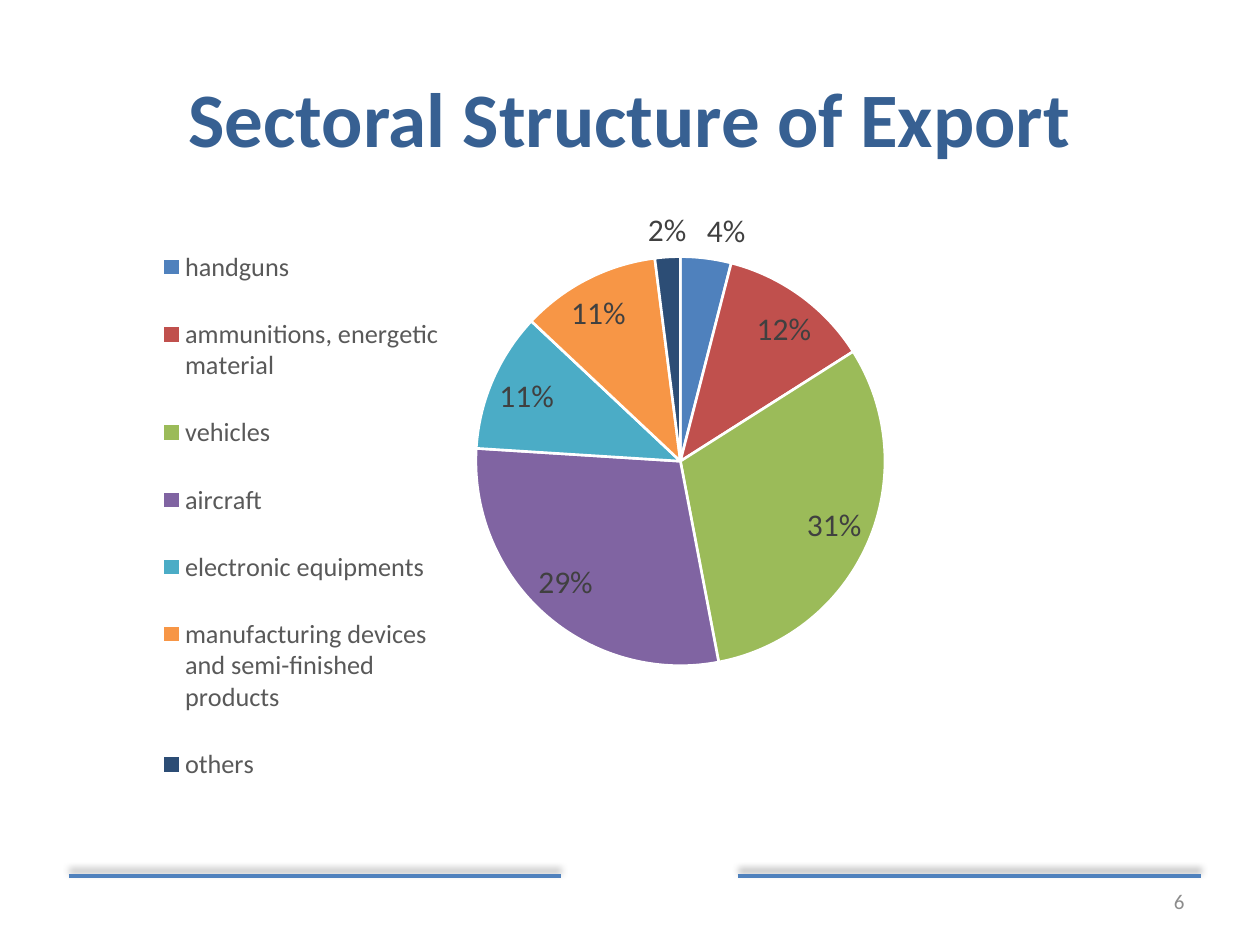
from lxml.etree import SubElement
from pptx import Presentation
from pptx.chart.data import CategoryChartData
from pptx.dml.color import RGBColor
from pptx.enum.chart import XL_CHART_TYPE, XL_LABEL_POSITION, XL_LEGEND_POSITION
from pptx.enum.shapes import MSO_CONNECTOR
from pptx.enum.text import MSO_ANCHOR, PP_ALIGN
from pptx.oxml import parse_xml
from pptx.oxml.ns import nsdecls, qn
from pptx.util import Emu, Pt

PX_PER_INCH = 126
FONT = "Calibri"
WHITE = RGBColor(0xFF, 0xFF, 0xFF)
BLACK = RGBColor(0x00, 0x00, 0x00)
NAVY = RGBColor(0x37, 0x60, 0x92)
BLUE = RGBColor(0x4F, 0x81, 0xBD)
RED = RGBColor(0xC0, 0x50, 0x4D)
GREEN = RGBColor(0x9B, 0xBB, 0x59)
PURPLE = RGBColor(0x80, 0x64, 0xA2)
TEAL = RGBColor(0x4B, 0xAC, 0xC6)
ORANGE = RGBColor(0xF7, 0x96, 0x46)
DARK_BLUE = RGBColor(0x2C, 0x4D, 0x75)
LABEL_GRAY = RGBColor(0x40, 0x40, 0x40)
LEGEND_GRAY = RGBColor(0x59, 0x59, 0x59)
NUMBER_GRAY = RGBColor(0x8C, 0x8C, 0x8C)

SECTORS = [
    ("handguns", 4, BLUE),
    ("ammunitions, energetic material", 12, RED),
    ("vehicles", 31, GREEN),
    ("aircraft", 29, PURPLE),
    ("electronic equipments", 11, TEAL),
    ("manufacturing devices and semi-finished products", 11, ORANGE),
    ("others", 2, DARK_BLUE),
]
PLOT_AREA = {"x": 0.31, "y": 0.13, "w": 0.46, "h": 0.6}
LEGEND_AREA = {"x": 0.02, "y": 0.07, "w": 0.29, "h": 0.88}


def px(length):
    return Emu(round(length * 914400 / PX_PER_INCH))


def set_font(font, color, **values):
    for name, value in {"name": FONT, **values}.items():
        setattr(font, name, value)
    font.color.rgb = color


def add_text(slide, bounds, text, align, color, **values):
    box = slide.shapes.add_textbox(*map(px, bounds))
    frame = box.text_frame
    frame.word_wrap = True
    frame.vertical_anchor = MSO_ANCHOR.MIDDLE
    para = frame.paragraphs[0]
    para.alignment = align
    span = para.add_run()
    span.text = text
    set_font(span.font, color, **values)


def add_footer_line(slide, left, right, top):
    line = slide.shapes.add_connector(
        MSO_CONNECTOR.STRAIGHT, px(left), px(top), px(right), px(top))
    line.line.color.rgb = BLUE
    line.line.width = Pt(2)
    line._element.spPr.append(parse_xml(
        f'<a:effectLst {nsdecls("a")}>'
        '<a:outerShdw blurRad="50800" dist="38100" dir="16200000" rotWithShape="0">'
        '<a:srgbClr val="000000"><a:alpha val="40000"/></a:srgbClr>'
        '</a:outerShdw></a:effectLst>'))


def set_layout(element, area, inner=False):
    for old in element.findall(qn("c:layout")):
        element.remove(old)
    layout = element.makeelement(qn("c:layout"), {})
    manual = SubElement(layout, qn("c:manualLayout"))
    settings = {"layoutTarget": "inner"} if inner else {}
    settings.update(xMode="edge", yMode="edge", **area)
    for name, value in settings.items():
        SubElement(manual, qn(f"c:{name}")).set("val", str(value))
    element.insert(0 if inner else 1, layout)


def add_pie(slide, bounds):
    data = CategoryChartData()
    data.categories = [name for name, _, _ in SECTORS]
    data.add_series("Series 1", [value for _, value, _ in SECTORS])
    chart = slide.shapes.add_chart(XL_CHART_TYPE.PIE, *map(px, bounds), data).chart
    chart.has_title = False
    set_font(chart.font, BLACK, size=Pt(10))
    chart.has_legend = True
    legend = chart.legend
    legend.position = XL_LEGEND_POSITION.BOTTOM
    legend.include_in_layout = False
    set_font(legend.font, LEGEND_GRAY, size=Pt(15))
    set_layout(legend._element, LEGEND_AREA)
    plot = chart.plots[0]
    plot.vary_by_categories = True
    set_layout(chart._chartSpace.chart.plotArea, PLOT_AREA, inner=True)
    for index, (_, _, color) in enumerate(SECTORS):
        slice_format = plot.series[0].points[index].format
        slice_format.fill.solid()
        slice_format.fill.fore_color.rgb = color
        slice_format.line.color.rgb = WHITE
        slice_format.line.width = Pt(1.5)
    labels = plot.series[0].data_labels
    label_values = {
        "show_percentage": True,
        "show_value": False,
        "number_format": "0%",
        "number_format_is_linked": False,
        "position": XL_LABEL_POSITION.BEST_FIT,
    }
    for name, value in label_values.items():
        setattr(labels, name, value)
    set_font(labels.font, LABEL_GRAY, size=Pt(18))


def main():
    deck = Presentation()
    deck.slide_width, deck.slide_height = px(1260), px(945)
    slide = deck.slides.add_slide(deck.slide_layouts[6])
    for left, right in ((69, 561), (738, 1201)):
        add_footer_line(slide, left, right, 876)
    add_text(slide, (63, 38, 1134, 158), "Sectoral Structure of Export",
             PP_ALIGN.CENTER, NAVY, size=Pt(44), bold=True)
    add_text(slide, (903, 876, 294, 50), "6", PP_ALIGN.RIGHT, NUMBER_GRAY, size=Pt(12))
    add_pie(slide, (134, 168, 1012, 682))
    deck.save("out.pptx")


if __name__ == "__main__":
    main()
